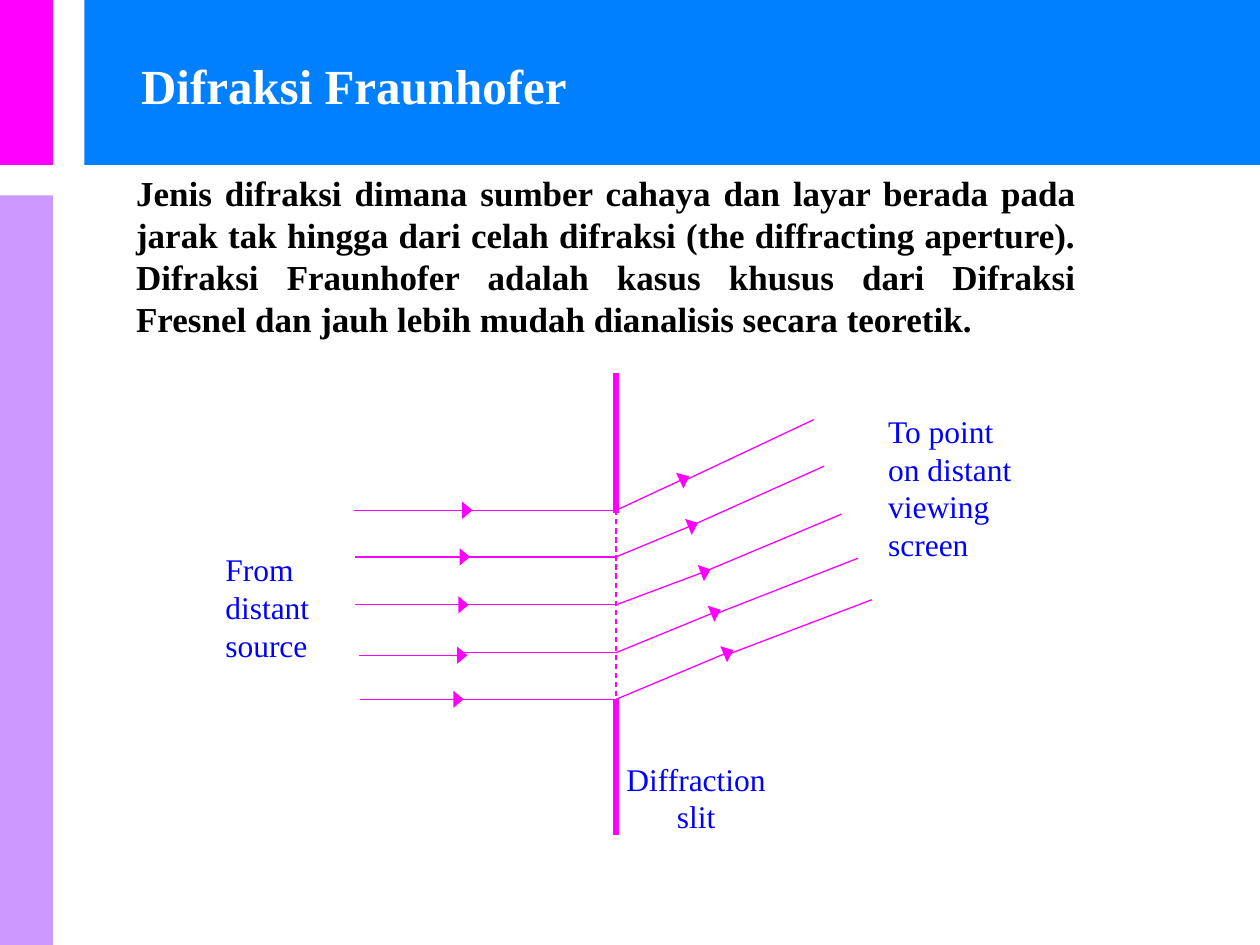
from lxml import etree
from pptx import Presentation
from pptx.dml.color import RGBColor
from pptx.enum.dml import MSO_LINE
from pptx.enum.shapes import MSO_CONNECTOR, MSO_SHAPE
from pptx.enum.text import MSO_ANCHOR, MSO_AUTO_SIZE, PP_ALIGN
from pptx.oxml.ns import qn
from pptx.util import Inches, Pt

WHITE = RGBColor(0xFF, 0xFF, 0xFF)
BLACK = RGBColor(0x00, 0x00, 0x00)
SKY = RGBColor(0x00, 0x80, 0xFF)
MAGENTA = RGBColor(0xFF, 0x00, 0xFF)
LILAC = RGBColor(0xCC, 0x99, 0xFF)
BLUE = RGBColor(0x00, 0x00, 0xFF)

RECTANGLE = MSO_SHAPE.RECTANGLE
STRAIGHT = MSO_CONNECTOR.STRAIGHT
DASH = MSO_LINE.DASH
NO_FIT = MSO_AUTO_SIZE.NONE
TOP = MSO_ANCHOR.TOP
LEFT, CENTER, JUSTIFY = PP_ALIGN.LEFT, PP_ALIGN.CENTER, PP_ALIGN.JUSTIFY

FONT = "Times New Roman"
TITLE = "Difraksi Fraunhofer"
BODY = (
    "Jenis difraksi dimana sumber cahaya dan layar berada pada jarak tak hingga "
    "dari celah difraksi (the diffracting aperture). Difraksi Fraunhofer adalah "
    "kasus khusus dari Difraksi Fresnel dan jauh lebih mudah dianalisis secara teoretik."
)

SLIT_X, SLIT_TOP, SLIT_BOTTOM = 2.08, 1.09, 2.59
# RAYS


def place(shape, box):
    shape.left, shape.top, shape.width, shape.height = map(Inches, box)


def write(shape, lines, size, color, align=LEFT, bold=False, wrap=False):
    frame = shape.text_frame
    frame.text = "\n".join(lines)
    frame.word_wrap = wrap
    frame.auto_size = NO_FIT
    frame.vertical_anchor = TOP
    for para in frame.paragraphs:
        properties = para._p.get_or_add_pPr()
        properties.set("marL", "0")
        properties.set("indent", "0")
        etree.SubElement(properties, qn("a:buNone"))
        para.alignment = align
        para.line_spacing = 1.0
        para.space_before = Pt(0)
        para.font.name = FONT
        para.font.size = Pt(size)
        para.font.bold = bold
        para.font.color.rgb = color


def add_band(page, box, color):
    band = page.shapes.add_shape(RECTANGLE, *map(Inches, box))
    band.shadow.inherit = False
    band.fill.solid()
    band.fill.fore_color.rgb = color
    band.line.fill.background()


def add_frame(page, box):
    left, top, width, height = box
    side, header, gap = 0.42, 1.31, 0.24
    add_band(page, (left + 0.67, top, width - 0.67, header), SKY)
    add_band(page, (left, top, side, header), MAGENTA)
    below = header + gap
    add_band(page, (left, top + below, side, height - below), LILAC)


def add_heading(page, box):
    place(page.shapes.title, box)
    write(page.shapes.title, [TITLE], 28, WHITE, bold=True)


def add_definition(page, box):
    body = page.placeholders[1]
    place(body, box)
    write(body, [BODY], 20, BLACK, JUSTIFY, bold=True, wrap=True)


def add_line(group, origin, start, end, width=0.75, arrow=False, dash=None):
    points = [Inches(base + offset) for point in (start, end)
              for base, offset in zip(origin, point)]
    line = group.shapes.add_connector(STRAIGHT, *points)
    line.line.color.rgb = MAGENTA
    line.line.width = Pt(width)
    if dash:
        line.line.dash_style = dash
    if arrow:
        etree.SubElement(line.line._get_or_add_ln(), qn("a:tailEnd"),
                         type="triangle", w="lg", len="med")
    etree.SubElement(line._element.spPr, qn("a:effectLst"))


def add_label(group, origin, box, lines, align=LEFT):
    left, top, width, height = box
    label = group.shapes.add_textbox(Inches(origin[0] + left), Inches(origin[1] + top),
                                     Inches(width), Inches(height))
    write(label, lines, 18, BLUE, align)


def add_diagram(page, box):
    origin, height = box[:2], box[3]
    group = page.shapes.add_group_shape()
    for top, bottom in ((0, SLIT_TOP + 0.02), (SLIT_BOTTOM, height)):
        add_line(group, origin, (SLIT_X, top), (SLIT_X, bottom), width=3)
    add_line(group, origin, (SLIT_X, SLIT_TOP), (SLIT_X, SLIT_BOTTOM), dash=DASH)
    for source, tip, slit_y, bend, joint, screen in RAYS:
        slit = (SLIT_X, slit_y)
        add_line(group, origin, source, (tip, source[1]), arrow=True)
        add_line(group, origin, (tip - 0.05, slit_y), slit)
        add_line(group, origin, slit, bend, arrow=True)
        add_line(group, origin, joint, screen)
    add_label(group, origin, (2.06, 3.02, 1.31, 0.7), ["Diffraction", "slit"], CENTER)
    add_label(group, origin, (-1.12, 1.36, 0.87, 1), ["From", "distant", "source"])
    add_label(group, origin, (4.14, 0.26, 1.18, 1.3),
              ["To point", "on distant", "viewing", "screen"])


RAYS = [
    ((0, 1.09), 0.94, 1.09, (2.66, 0.82), (2.61, 0.86), (3.65, 0.37)),
    ((0.01, 1.46), 0.92, 1.46, (2.73, 1.19), (2.66, 1.22), (3.73, 0.74)),
    ((0.01, 1.84), 0.91, 1.84, (2.83, 1.56), (2.75, 1.59), (3.87, 1.12)),
    ((0.04, 2.24), 0.9, 2.22, (2.91, 1.88), (2.85, 1.92), (4, 1.47)),
    ((0.05, 2.59), 0.87, 2.59, (3.01, 2.2), (2.95, 2.24), (4.11, 1.8)),
]


def main():
    deck = Presentation()
    deck.slide_width, deck.slide_height = Inches(10), Inches(7.5)
    page = deck.slides.add_slide(deck.slide_layouts[1])
    page.background.fill.solid()
    page.background.fill.fore_color.rgb = WHITE
    add_frame(page, (0, 0, 10, 7.5))
    for holder in list(page.placeholders):
        page.shapes._spTree.append(holder._element)
    add_definition(page, (0.98, 1.31, 7.66, 1.43))
    add_heading(page, (1.02, 0.39, 3.58, 0.57))
    add_diagram(page, (2.81, 2.96, 4.11, 3.67))
    deck.save("out.pptx")


if __name__ == "__main__":
    main()
